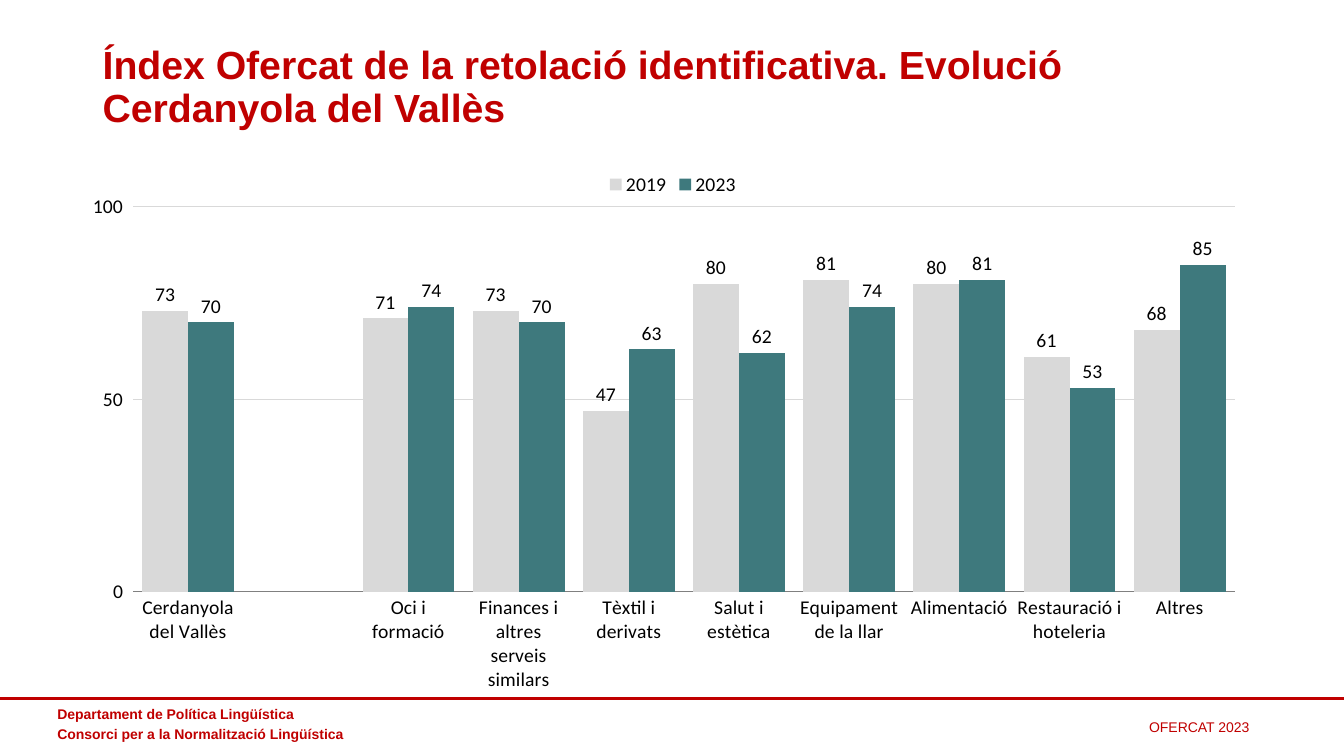
import pptx
import pptx.chart.data
import pptx.dml.color
import pptx.enum.chart
import pptx.enum.shapes
import pptx.enum.text
import pptx.oxml
import pptx.util

RED = pptx.dml.color.RGBColor(0xC0, 0x00, 0x00)
BLACK = pptx.dml.color.RGBColor(0x00, 0x00, 0x00)
LIGHT_GREY = pptx.dml.color.RGBColor(0xD9, 0xD9, 0xD9)
MID_GREY = pptx.dml.color.RGBColor(0x80, 0x80, 0x80)
TEAL = pptx.dml.color.RGBColor(0x3E, 0x79, 0x7D)

EMU_PER_PX = 9144
SLIDE_WIDTH, SLIDE_HEIGHT = 1333, 750

CATEGORIES = [
    "Cerdanyola del Vallès",
    "",
    "Oci i formació",
    "Finances i altres serveis similars",
    "Tèxtil i derivats",
    "Salut i estètica",
    "Equipament de la llar",
    "Alimentació",
    "Restauració i hoteleria",
    "Altres",
]
SERIES = [
    ("2019", LIGHT_GREY, [73, None, 71, 73, 47, 80, 81, 80, 61, 68]),
    ("2023", TEAL, [70, None, 74, 70, 63, 62, 74, 81, 53, 85]),
]
PLOT_AREA = {"x": 0.034, "y": 0.087, "w": 0.951, "h": 0.732}


def px(*lengths):
    return [pptx.util.Emu(n * EMU_PER_PX) for n in lengths]


class SlideBuilder:
    text_font = "Arial"
    chart_font = "Calibri"
    chart_size = pptx.util.Pt(14)
    thin = pptx.util.Pt(0.75)

    def __init__(self, prs):
        self.s = prs.slides.add_slide(prs.slide_layouts[6])

    def text(self, box, lines, size, bold=False, spacing=1.14,
             align=pptx.enum.text.PP_ALIGN.LEFT,
             anchor=pptx.enum.text.MSO_ANCHOR.TOP):
        tf = self.s.shapes.add_textbox(*px(*box)).text_frame
        tf.word_wrap = True
        tf.vertical_anchor = anchor
        tf.text = "\n".join(lines)
        for p in tf.paragraphs:
            p.alignment = align
            p.line_spacing = spacing
            p.font.name = self.text_font
            p.font.size = pptx.util.Pt(size)
            p.font.bold = bold
            p.font.color.rgb = RED

    def line(self, x1, y1, x2, y2):
        connector = self.s.shapes.add_connector(
            pptx.enum.shapes.MSO_CONNECTOR.STRAIGHT, *px(x1, y1, x2, y2))
        connector.line.color.rgb = RED
        connector.line.width = pptx.util.Pt(1.5)
        pptx.oxml.xmlchemy.OxmlElement
        connector._element.spPr.append(
            pptx.oxml.xmlchemy.OxmlElement("a:effectLst"))

    def style_font(self, font):
        font.name = self.chart_font
        font.size = self.chart_size
        font.color.rgb = BLACK

    def column_chart(self, box, categories, series):
        data = pptx.chart.data.CategoryChartData()
        data.categories = categories
        for name, _, values in series:
            data.add_series(name, values)
        chart = self.s.shapes.add_chart(
            pptx.enum.chart.XL_CHART_TYPE.COLUMN_CLUSTERED,
            *px(*box), data).chart
        self.style_font(chart.font)
        chart.has_title = False
        chart.has_legend = True
        chart.legend.position = pptx.enum.chart.XL_LEGEND_POSITION.TOP
        chart.legend.include_in_layout = False
        self.style_font(chart.legend.font)
        self.style_axes(chart)
        plot = chart.plots[0]
        plot.gap_width = 40
        plot.overlap = 0
        plot.vary_by_categories = False
        for bars, (_, color, _) in zip(plot.series, series):
            self.style_series(bars, color)
        self.place_plot(chart)

    def style_axes(self, chart):
        cat, val = chart.category_axis, chart.value_axis
        for axis in (cat, val):
            self.style_font(axis.tick_labels.font)
        cat.major_tick_mark = pptx.enum.chart.XL_TICK_MARK.NONE
        cat.format.line.color.rgb = MID_GREY
        cat.format.line.width = self.thin
        val.minimum_scale = 0
        val.maximum_scale = 100
        val.major_unit = 50
        val.format.line.fill.background()
        val.has_major_gridlines = True
        val.major_gridlines.format.line.color.rgb = LIGHT_GREY
        val.major_gridlines.format.line.width = self.thin

    def style_series(self, bars, color):
        bars.format.fill.solid()
        bars.format.fill.fore_color.rgb = color
        labels = bars.data_labels
        labels.show_value = True
        labels.position = pptx.enum.chart.XL_LABEL_POSITION.OUTSIDE_END
        labels.number_format = "#,##0"
        labels.number_format_is_linked = False
        self.style_font(labels.font)

    def place_plot(self, chart):
        area = chart._chartSpace.chart.plotArea
        for old in area.findall(pptx.oxml.ns.qn("c:layout")):
            area.remove(old)
        layout = pptx.oxml.xmlchemy.OxmlElement("c:layout")
        manual = pptx.oxml.xmlchemy.OxmlElement("c:manualLayout")
        settings = {"layoutTarget": "inner", "xMode": "edge",
                    "yMode": "edge", **PLOT_AREA}
        for tag, value in settings.items():
            item = pptx.oxml.xmlchemy.OxmlElement(f"c:{tag}")
            item.set("val", str(value))
            manual.append(item)
        layout.append(manual)
        area.insert(0, layout)


def main():
    prs = pptx.Presentation()
    prs.slide_width, prs.slide_height = px(SLIDE_WIDTH, SLIDE_HEIGHT)
    slide = SlideBuilder(prs)
    slide.line(0, 693, SLIDE_WIDTH, 693)
    slide.text((582, 706, 667, 28), ["OFERCAT 2023"], 10,
               align=pptx.enum.text.PP_ALIGN.RIGHT)
    slide.text((47, 693, 329, 48),
               ["Departament de Política Lingüística",
                "Consorci per a la Normalització Lingüística"], 10, bold=True)
    slide.text((92, 40, 1150, 95),
               ["Índex Ofercat de la retolació identificativa. "
                "Evolució Cerdanyola del Vallès"], 28, bold=True, spacing=0.9,
               anchor=pptx.enum.text.MSO_ANCHOR.MIDDLE)
    slide.column_chart((92, 160, 1150, 526), CATEGORIES, SERIES)
    prs.save("out.pptx")


if __name__ == "__main__":
    main()
